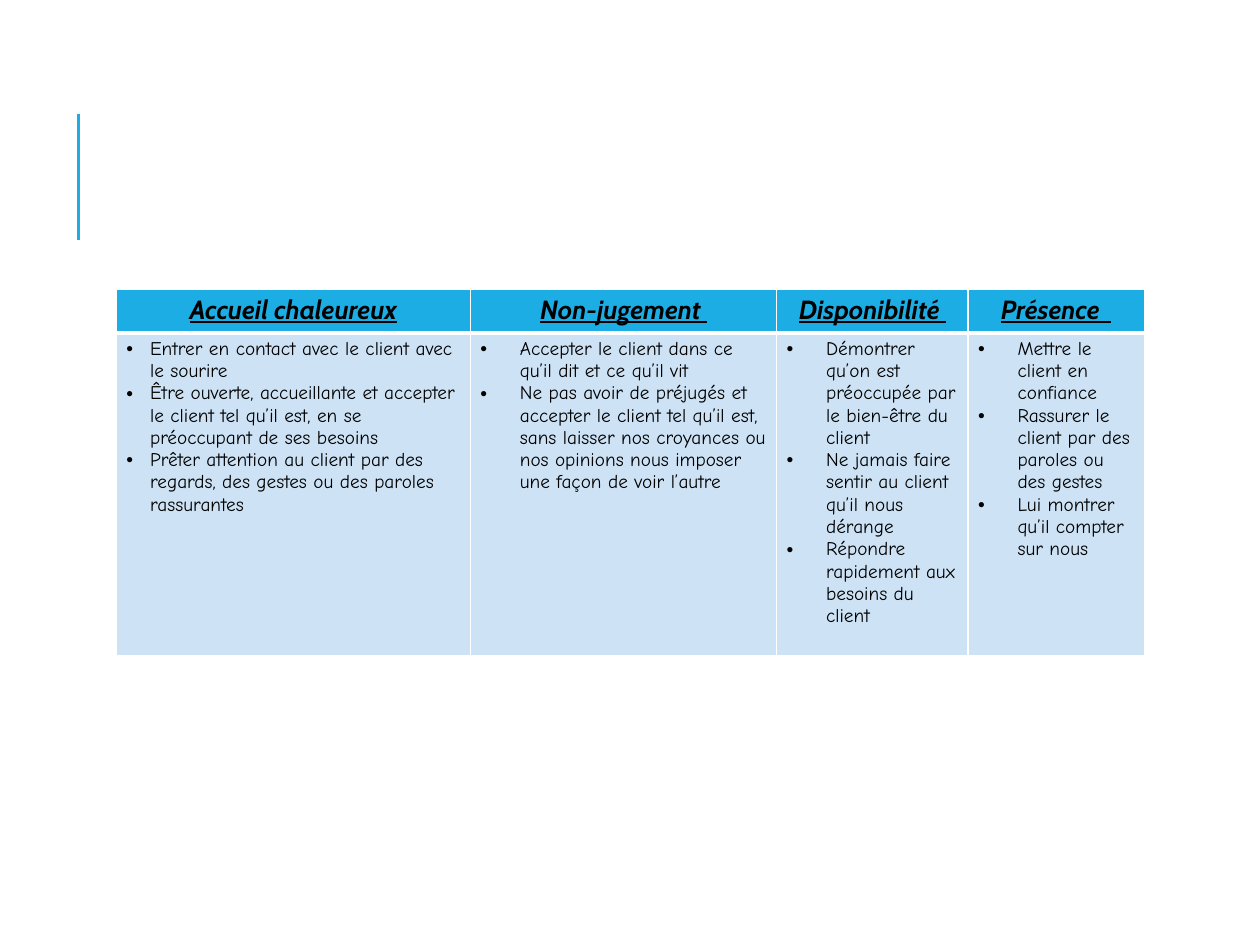
"""Build a slide with a table of four attitudes towards the client."""
from dataclasses import dataclass

from lxml.etree import SubElement
from pptx import Presentation
from pptx.dml.color import RGBColor as Color
from pptx.enum.shapes import MSO_CONNECTOR as Connector
from pptx.enum.text import MSO_ANCHOR as Anchor, PP_ALIGN as Align
from pptx.oxml import parse_xml
from pptx.oxml.ns import nsdecls, qn
from pptx.util import Pt


@dataclass(frozen=True)
class Theme:
    accent: Color = Color.from_string("1CADE4")
    pale: Color = Color.from_string("CDE3F5")
    text: Color = Color.from_string("000000")
    border: str = "FFFFFF"
    heading_font: str = "Cabin"
    body_font: str = "Comic Neue"
    heading_size: int = 15
    body_size: int = 11


theme = Theme()

columns = [
    ("Accueil chaleureux", 202.3, 13.5, [
        "Entrer en contact avec le client avec le sourire",
        "Être ouverte, accueillante et accepter le client tel qu’il est, en se préoccupant de ses besoins",
        "Prêter attention au client par des regards, des gestes ou des paroles rassurantes",
    ]),
    ("Non-jugement ", 175, 22.5, [
        "Accepter le client dans ce qu’il dit et ce qu’il vit",
        "Ne pas avoir de préjugés et accepter le client tel qu’il est, sans laisser nos croyances "
        "ou nos opinions nous imposer une façon de voir l’autre",
    ]),
    ("Disponibilité ", 109.4, 22.5, [
        "Démontrer qu’on est préoccupée par le bien-être du client",
        "Ne jamais faire sentir au client qu’il nous dérange",
        "Répondre rapidement aux besoins du client",
    ]),
    ("Présence  ", 100.8, 22.5, [
        "Mettre le client en confiance",
        "Rassurer le client par des paroles ou des gestes",
        "Lui montrer qu’il compter sur nous",
    ]),
]


def style_cell(cell, fill, top, bottom):
    cell.margin_left = cell.margin_right = Pt(5.8)
    cell.margin_top = cell.margin_bottom = Pt(2.9)
    cell.vertical_anchor = Anchor.TOP
    cell.fill.solid()
    cell.fill.fore_color.rgb = fill
    sides = [("lnL", 1), ("lnR", 1), ("lnT", top), ("lnB", bottom)]
    for position, (side, width) in enumerate(sides):
        border = parse_xml(
            f'<a:{side} {nsdecls("a")} w="{Pt(width)}"><a:solidFill>'
            f'<a:srgbClr val="{theme.border}"/></a:solidFill></a:{side}>'
        )
        cell._tc.get_or_add_tcPr().insert(position, border)


def style_font(font, name, size, heading):
    font.name = name
    font.size = Pt(size)
    font.color.rgb = theme.text
    font.bold = font.italic = font.underline = heading


deck = Presentation()
deck.slide_width, deck.slide_height = Pt(720), Pt(540)
page = deck.slides.add_slide(deck.slide_layouts[6])

rule = page.shapes.add_connector(Connector.STRAIGHT, Pt(44.9), Pt(137), Pt(44.9), Pt(65))
rule.line.color.rgb = theme.accent
rule.line.width = Pt(1.5)
SubElement(rule._element.spPr, qn("a:effectLst"))

table_width = sum(width for _, width, _, _ in columns)
table = page.shapes.add_table(
    2, len(columns), Pt(66.5), Pt(165), Pt(table_width), Pt(209.5)
).table
table.rows[0].height = Pt(25.2)
table.rows[1].height = Pt(184.3)

for index, (heading, width, indent, items) in enumerate(columns):
    table.columns[index].width = Pt(width)

    heading_cell = table.cell(0, index)
    style_cell(heading_cell, theme.accent, 1, 3)
    heading_cell.text_frame.text = heading
    para = heading_cell.text_frame.paragraphs[0]
    para.alignment = Align.CENTER
    style_font(para.runs[0].font, theme.heading_font, theme.heading_size, True)

    body_cell = table.cell(1, index)
    style_cell(body_cell, theme.pale, 3, 1)
    body_cell.text_frame.text = "\n".join(items)
    for para in body_cell.text_frame.paragraphs:
        style_font(para.runs[0].font, theme.body_font, theme.body_size, False)
        properties = para._p.get_or_add_pPr()
        properties.set("marL", str(Pt(indent)))
        properties.set("indent", str(Pt(-indent)))
        SubElement(properties, qn("a:buFont"), typeface="Arial")
        SubElement(properties, qn("a:buChar"), char="•")

deck.save("out.pptx")
